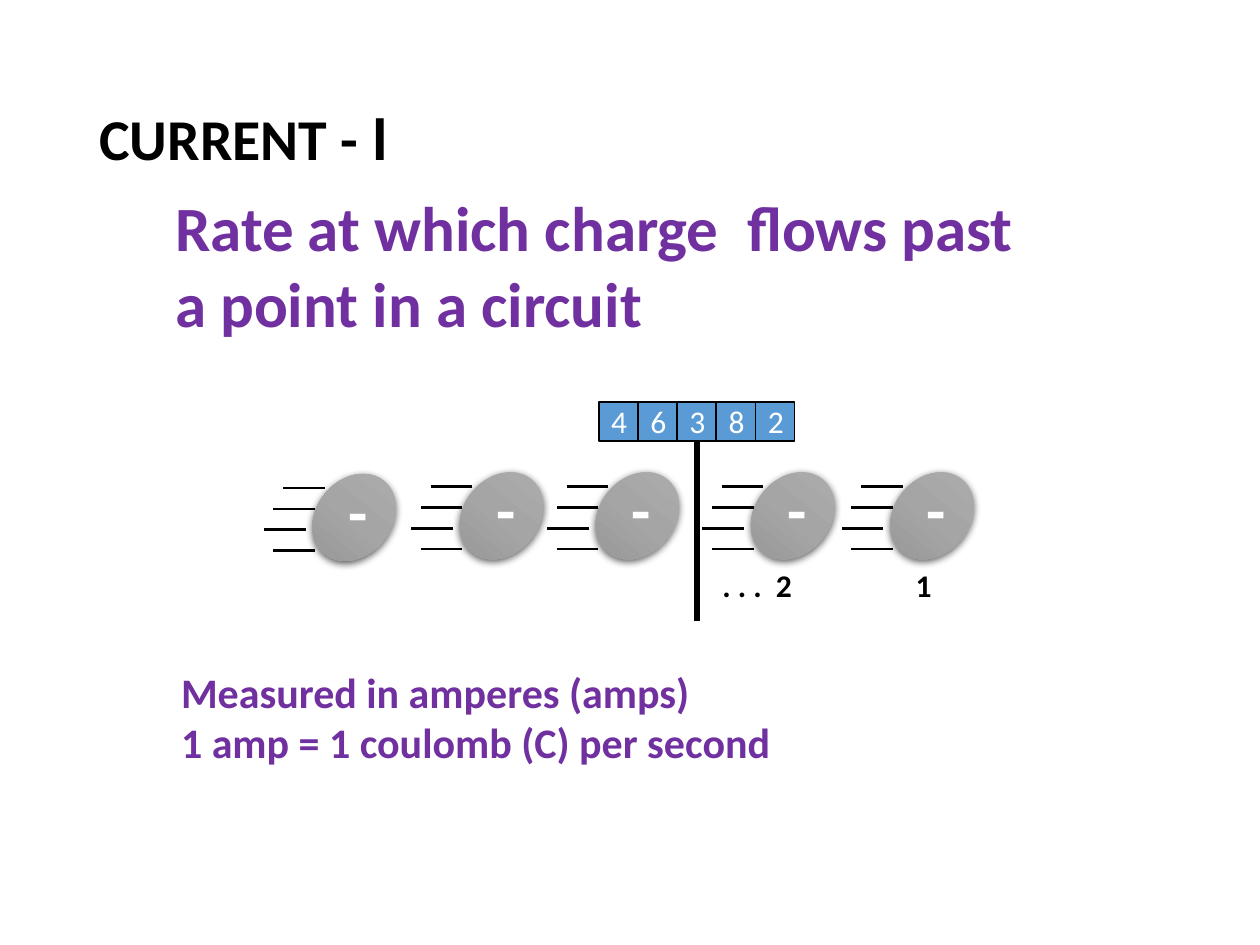
from dataclasses import dataclass

from lxml.etree import SubElement
from pptx import Presentation
from pptx.dml.color import RGBColor
from pptx.enum.shapes import MSO_CONNECTOR, MSO_SHAPE
from pptx.enum.text import MSO_ANCHOR, MSO_AUTO_SIZE, PP_ALIGN
from pptx.oxml import parse_xml
from pptx.oxml.ns import nsdecls, qn
from pptx.shapes.shapetree import GroupShapes
from pptx.text.text import TextFrame
from pptx.util import Cm, Pt

BLACK = RGBColor(0x00, 0x00, 0x00)
WHITE = RGBColor(0xFF, 0xFF, 0xFF)
PURPLE = RGBColor(0x70, 0x30, 0xA0)
BLUE = RGBColor(0x5B, 0x9B, 0xD5)
SPHERE_STOPS = (
    (0, RGBColor(0xAF, 0xAF, 0xAF)),
    (50, RGBColor(0xA5, 0xA5, 0xA5)),
    (100, RGBColor(0x93, 0x93, 0x93)),
)

TRAIL_ENDS = (0.17, -0.03, -0.22, -0.03)
TRAIL_LENGTH = 0.84
TRAIL_GAP = 0.42
DIGIT_SIDE = 0.79


@dataclass(frozen=True)
class Electron:
    left: float
    top: float = 9.45


@dataclass(frozen=True)
class Box:
    left: float
    top: float
    width: float
    height: float


ELECTRONS = (
    Electron(9.35),
    Electron(12.09),
    Electron(6.38, 9.48),
    Electron(18.03),
    Electron(15.22),
)


def write_text(frame: TextFrame, *lines: str, size: float, color: RGBColor,
               bold: bool = True, align: PP_ALIGN = PP_ALIGN.LEFT,
               anchor: MSO_ANCHOR = MSO_ANCHOR.TOP, wrap: bool = True) -> None:
    frame.word_wrap = wrap
    frame.vertical_anchor = anchor
    for index, line in enumerate(lines):
        paragraph = frame.add_paragraph() if index else frame.paragraphs[0]
        paragraph.alignment = align
        run = paragraph.add_run()
        run.text = line
        run.font.name = "Calibri"
        run.font.size = Pt(size)
        run.font.bold = bold
        run.font.color.rgb = color


def add_label(shapes: GroupShapes, box: Box, *lines: str, size: float,
              color: RGBColor, wrap: bool = True) -> None:
    label = shapes.add_textbox(Cm(box.left), Cm(box.top), Cm(box.width), Cm(box.height))
    write_text(label.text_frame, *lines, size=size, color=color, wrap=wrap)
    label.text_frame.auto_size = MSO_AUTO_SIZE.SHAPE_TO_FIT_TEXT


def add_line(shapes: GroupShapes, x1: float, y1: float, x2: float, y2: float,
             weight: float) -> None:
    line = shapes.add_connector(MSO_CONNECTOR.STRAIGHT, Cm(x1), Cm(y1), Cm(x2), Cm(y2))
    line.line.color.rgb = BLACK
    line.line.width = Pt(weight)
    SubElement(line._element.spPr, qn("a:effectLst"))


def add_electron(shapes: GroupShapes, electron: Electron) -> None:
    sphere = shapes.add_shape(MSO_SHAPE.OVAL, Cm(electron.left), Cm(electron.top),
                              Cm(1.52), Cm(1.9))
    sphere.rotation = 39.2
    sphere.line.fill.background()
    stops = "".join(
        f'<a:gs pos="{position * 1000}"><a:srgbClr val="{color}"/></a:gs>'
        for position, color in SPHERE_STOPS
    )
    properties = sphere._element.spPr
    properties.find(qn("a:prstGeom")).addnext(parse_xml(
        f'<a:gradFill {nsdecls("a")} rotWithShape="1"><a:gsLst>{stops}</a:gsLst>'
        '<a:lin ang="5400000" scaled="0"/></a:gradFill>'
    ))
    properties.append(parse_xml(
        f'<a:effectLst {nsdecls("a")}><a:outerShdw blurRad="{Pt(4.5)}" dist="{Pt(1.5)}" '
        'dir="5400000" algn="ctr" rotWithShape="0"><a:srgbClr val="000000">'
        '<a:alpha val="63000"/></a:srgbClr></a:outerShdw></a:effectLst>'
    ))
    add_label(shapes, Box(electron.left + 0.4, electron.top - 0.08, 1.68, 1.47),
              "-", size=36, color=WHITE)
    for row, end in enumerate(TRAIL_ENDS):
        x = electron.left + end
        y = electron.top + 0.36 + row * TRAIL_GAP
        add_line(shapes, x, y, x - TRAIL_LENGTH, y, 1.5)


def add_counter(shapes: GroupShapes, left: float, top: float, digits: str) -> None:
    for index, digit in enumerate(digits):
        cell = shapes.add_shape(MSO_SHAPE.RECTANGLE, Cm(left + index * DIGIT_SIDE), Cm(top),
                                Cm(DIGIT_SIDE), Cm(DIGIT_SIDE))
        cell.shadow.inherit = False
        cell.fill.solid()
        cell.fill.fore_color.rgb = BLUE
        cell.line.color.rgb = BLACK
        cell.line.width = Pt(1)
        write_text(cell.text_frame, digit, size=18, color=WHITE, bold=False,
                   align=PP_ALIGN.CENTER, anchor=MSO_ANCHOR.MIDDLE)


def main() -> None:
    presentation = Presentation()
    presentation.slide_width = Cm(25.4)
    presentation.slide_height = Cm(19.05)
    slide = presentation.slides.add_slide(presentation.slide_layouts[5])

    title = slide.shapes.title
    title.left, title.top, title.width, title.height = Cm(1.75), Cm(1.02), Cm(21.9), Cm(3.68)
    write_text(title.text_frame, "CURRENT - ", size=33, color=BLACK, anchor=MSO_ANCHOR.MIDDLE)
    heading = title.text_frame.paragraphs[0]
    heading.line_spacing = 0.9
    symbol = heading.add_run()
    symbol.text = "I"
    symbol.font.name = "Lato"
    symbol.font.size = Pt(33)
    symbol.font.bold = True
    symbol.font.color.rgb = BLACK

    add_label(slide.shapes, Box(3.28, 3.68, 19.89, 3.33),
              "Rate at which charge  flows past", "a point in a circuit",
              size=36, color=PURPLE)

    flow = slide.shapes.add_group_shape().shapes
    for electron in ELECTRONS:
        add_electron(flow, electron)
    add_line(flow, 14.05, 12.52, 14.05, 8.92, 3)
    add_label(flow, Box(18.21, 11.28, 0.84, 1.02), "1", size=18, color=BLACK, wrap=False)
    add_label(flow, Box(14.17, 11.28, 2.08, 1.02), " . . .  2", size=18, color=BLACK,
              wrap=False)

    add_label(slide.shapes, Box(3.4, 13.31, 19.61, 2.31),
              "Measured in amperes (amps)", "1 amp = 1 coulomb (C) per second",
              size=24, color=PURPLE)

    counter = slide.shapes.add_group_shape().shapes
    add_counter(counter, 12.07, 8.1, "46382")

    presentation.save("out.pptx")


if __name__ == "__main__":
    main()
